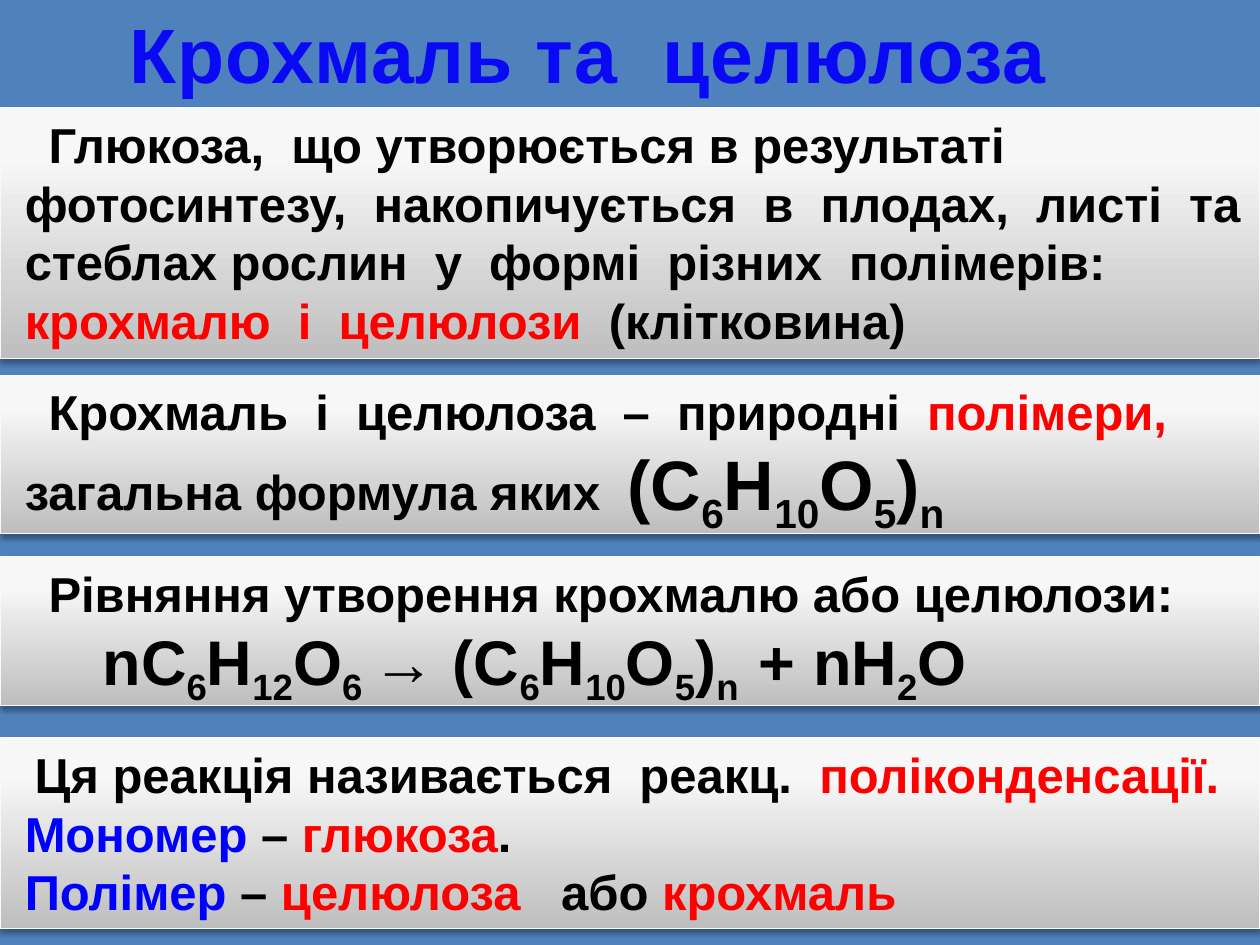
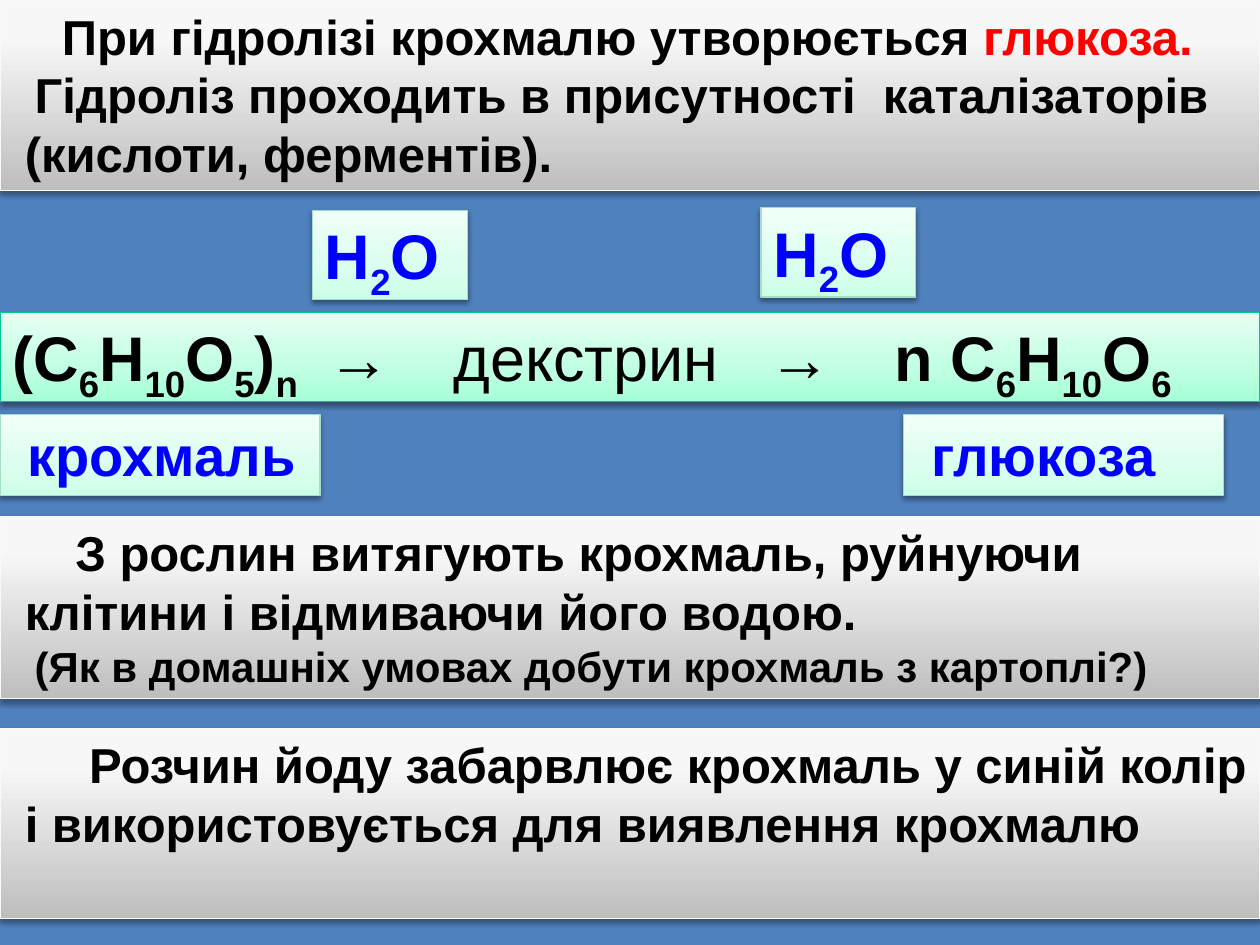
import pptx
import pptx.util
import pptx.dml.color
import pptx.enum.shapes
import pptx.enum.text
import pptx.oxml
import pptx.oxml.ns

Cm, Pt = pptx.util.Cm, pptx.util.Pt
RGB = pptx.dml.color.RGBColor.from_string

COLORS = {"background": "4F81BD", "title": "0909F6", "black": "000000",
          "red": "FF0000", "blue": "0000FF"}
# gradient stops run from the bottom edge to the top edge
LOOKS = {
    "text": {"stops": [(0, "BEBEBE"), (80, "F7F7F7"), (100, "F8F8F8")],
             "line": "F9F9F9", "shadow": 35, "margin": 0.25, "indent": 0.2},
    "reaction": {"stops": [(0, "A5FFD6"), (35, "BFFFE2"), (100, "E7FFF3")],
                 "line": "00C896", "shadow": 38, "margin": 0, "indent": 0},
    "label": {"stops": [(0, "CCFFE8"), (35, "DAFFEE"), (100, "F1FFF8")],
              "line": "A5DEC6", "shadow": 38, "margin": 0, "indent": 0},
}
FONT = "Arial"
WIDTH, HEIGHT = 25.4, 19.05
BODY, FORMULA = 28, 36
TAB_STOPS = [6.58, 9.25, 15.67, 18.38]
WATER = "Н_2_О"
STARCH = "(С_6_Н_10_О_5_)_n"
NS = pptx.oxml.ns.nsdecls("a")


def write_paragraph(p, size, runs):
    """Each run is (text, colour, size, bold), the last two optional; _ toggles subscript."""
    p.alignment = pptx.enum.text.PP_ALIGN.LEFT
    p.font.name, p.font.size, p.font.bold = FONT, Pt(size), True
    for text, color, *special in runs:
        if text == "\n":
            p.add_line_break()
            continue
        for i, part in enumerate(text.split("_")):
            if not part:
                continue
            r = p.add_run()
            r.text = part
            r.font.color.rgb = RGB(COLORS[color])
            if special:
                r.font.size = Pt(special[0])
            if len(special) > 1:
                r.font.bold = special[1]
            if i % 2:
                r.font._element.set("baseline", "-25000")


def add_panel(s, look_name, box, paragraphs):
    """Each paragraph is (extra first-line indent in cm, size, runs)."""
    look = LOOKS[look_name]
    sp = s.shapes.add_shape(pptx.enum.shapes.MSO_SHAPE.RECTANGLE, *map(Cm, box))
    sp.line.color.rgb = RGB(look["line"])
    sp.line.width = Pt(0.75)
    stops = "".join(f'<a:gs pos="{pos * 1000}"><a:srgbClr val="{color}"/></a:gs>'
                    for pos, color in look["stops"])
    sp._element.spPr.find(pptx.oxml.ns.qn("a:prstGeom")).addnext(pptx.oxml.parse_xml(
        f'<a:gradFill {NS} rotWithShape="1"><a:gsLst>{stops}</a:gsLst>'
        '<a:lin ang="16200000" scaled="1"/></a:gradFill>'))
    sp.shadow.inherit = False
    sp._element.spPr.find(pptx.oxml.ns.qn("a:effectLst")).append(pptx.oxml.parse_xml(
        f'<a:outerShdw {NS} blurRad="{Pt(3.1)}" dist="{Pt(1.8)}" dir="5400000" rotWithShape="0">'
        f'<a:srgbClr val="000000"><a:alpha val="{look["shadow"] * 1000}"/></a:srgbClr>'
        '</a:outerShdw>'))
    tf = sp.text_frame
    tf.word_wrap = True
    tf.vertical_anchor = pptx.enum.text.MSO_ANCHOR.TOP
    for i, (lead, size, runs) in enumerate(paragraphs):
        p = tf.add_paragraph() if i else tf.paragraphs[0]
        write_paragraph(p, size, runs)
        pPr = p._p.get_or_add_pPr()
        pPr.set("marL", str(Cm(look["margin"])))
        pPr.set("indent", str(Cm(look["indent"] + lead)))
    return sp


prs = pptx.Presentation()
prs.slide_width, prs.slide_height = Cm(WIDTH), Cm(HEIGHT)
slides = []
for _ in range(2):
    s = prs.slides.add_slide(prs.slide_layouts[6])
    s.background.fill.solid()
    s.background.fill.fore_color.rgb = RGB(COLORS["background"])
    slides.append(s)
polymers, hydrolysis = slides

# Slide 1: starch and cellulose
title = polymers.shapes.add_textbox(Cm(2.36), Cm(0), Cm(20.7), Cm(2.13))
title.text_frame.word_wrap = True
p = title.text_frame.paragraphs[0]
write_paragraph(p, 44, [("Крохмаль та  целюлоза", "title")])
p.runs[0].font._element.set("spc", "50")

# Full-width text panels: slide, top, height, paragraphs
text_panels = [
    (polymers, 2.18, 5.05, [(0.28, BODY, [
        ("Глюкоза,  що утворюється в результаті фотосинтезу,  накопичується  в  плодах,  "
         "листі  та стеблах рослин  у  формі  різних  полімерів: ", "black"),
        ("крохмалю  і  целюлози  ", "red"),
        ("(клітковина)", "black")])]),
    (polymers, 7.57, 3.18, [(0.28, BODY, [
        ("Крохмаль  і  целюлоза  –  природні  ", "black"),
        ("полімери, ", "red"),
        ("загальна формула яких  ", "black"),
        (STARCH, "black", 40)])]),
    (polymers, 11.23, 3, [
        (0.28, BODY, [("Рівняння утворення крохмалю або целюлози:", "black")]),
        (1.37, FORMULA, [(f"nС_6_Н_12_О_6 _→ {STARCH}  _+ n{WATER}", "black")])]),
    (polymers, 14.88, 3.84, [(0, BODY, [
        ("Ця реакція називається  реакц.  ", "black"),
        ("поліконденсації. ", "red"),
        ("Мономер ", "blue"),
        ("– ", "black"),
        ("глюкоза", "red"),
        (". ", "black"),
        ("\n", "black"),
        ("Полімер", "blue"),
        (" – ", "black"),
        ("целюлоза  ", "red"),
        (" або ", "black"),
        ("крохмаль", "red")])]),
    # Slide 2: hydrolysis of starch
    (hydrolysis, 0, 3.84, [
        (0.55, BODY, [("При гідролізі крохмалю утворюється ", "black"), ("глюкоза.", "red")]),
        (0, BODY, [("Гідроліз проходить в присутності  каталізаторів "
                    "(кислоти, ферментів).", "black")])]),
    (hydrolysis, 10.41, 3.68, [
        (0.82, BODY, [("З рослин витягують крохмаль, руйнуючи клітини "
                       "і відмиваючи його водою.", "black")]),
        (0, 24, [("(Як в домашніх умовах добути крохмаль з картоплі?)", "black")])]),
    (hydrolysis, 14.68, 3.84, [(1.1, BODY, [
        ("Розчин йоду забарвлює крохмаль у синій колір "
         "і використовується для виявлення крохмалю", "black")])]),
]
for s, top, height, paragraphs in text_panels:
    add_panel(s, "text", (0, top, WIDTH, height), paragraphs)

reaction = add_panel(hydrolysis, "reaction", (0, 6.3, WIDTH, 1.8), [(0, FORMULA, [
    (f"{STARCH}_\t→\t", "black"),
    ("декстрин\t→\t", "black", FORMULA, False),
    ("n С_6_Н_10_О_6", "black")])])
tabs = "".join(f'<a:tab pos="{Cm(x)}" algn="l"/>' for x in TAB_STOPS)
reaction.text_frame.paragraphs[0]._p.get_or_add_pPr().insert(
    0, pptx.oxml.parse_xml(f"<a:tabLst {NS}>{tabs}</a:tabLst>"))

# Labels above and below the reaction: text, box, indent, size
for text, box, lead, size in [
    (WATER, (6.3, 4.24, 3.12, 1.8), 0, FORMULA),
    (WATER, (15.34, 4.19, 3.12, 1.8), 0, FORMULA),
    ("крохмаль", (0, 8.36, 6.45, 1.63), 0.31, 32),
    ("глюкоза", (18.21, 8.36, 6.45, 1.63), 0.31, 32),
]:
    add_panel(hydrolysis, "label", box, [(lead, size, [(text, "blue")])])

prs.save("out.pptx")
